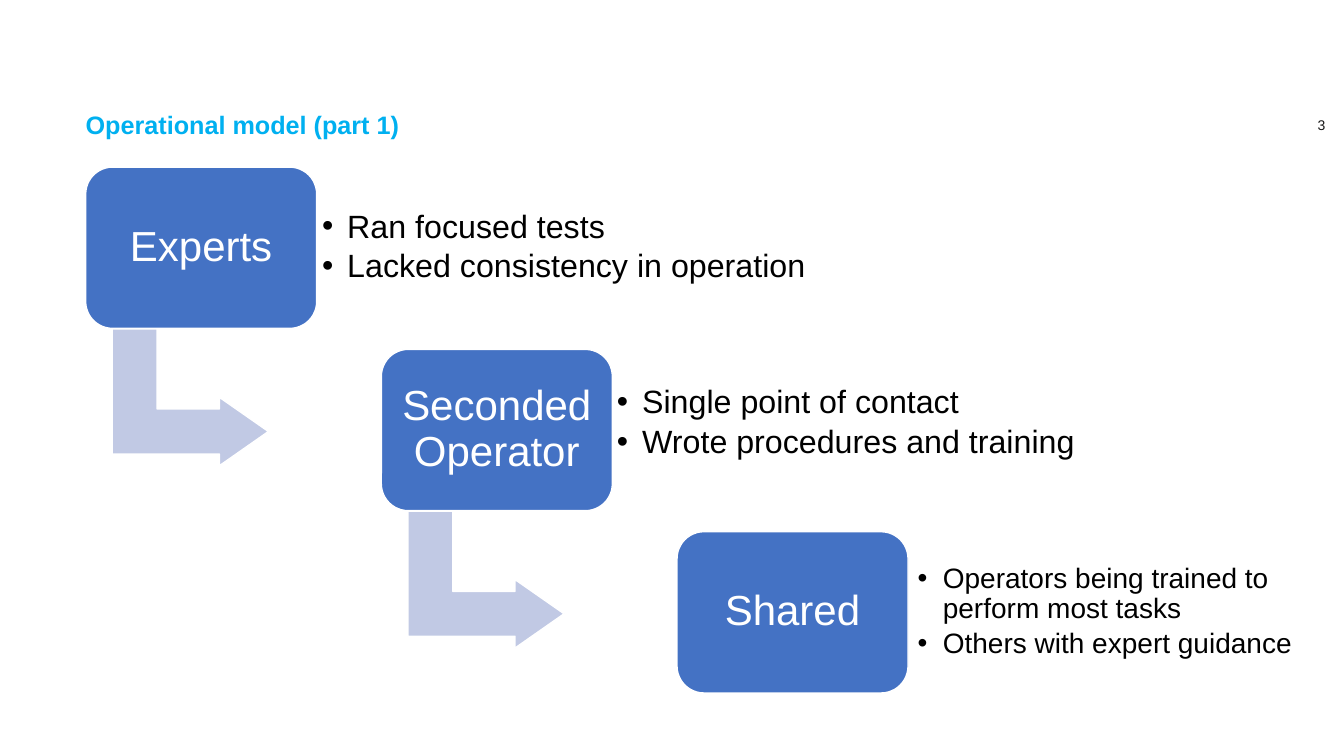
from lxml import etree
from pptx import Presentation, util as u
from pptx.dml.color import RGBColor
from pptx.enum import shapes as sh, text as tx
from pptx.oxml import ns

BLUE = RGBColor(0x44, 0x72, 0xC4)
PALE = RGBColor(0xC1, 0xC9, 0xE4)
CYAN = RGBColor(0x00, 0xB0, 0xF0)
WHITE = RGBColor(0xFF, 0xFF, 0xFF)
BLACK = RGBColor(0, 0, 0)
DARK = RGBColor(0x18, 0x17, 0x17)
WIDE, HIGH = u.Inches(13.333), u.Inches(7.5)
COLS, ROWS = 160, 90

STEPS = [
    ("Experts", ["Ran focused tests", "Lacked consistency in operation"],
     23, (26.7, 1.8, 71.2, 15.5)),
    ("Seconded Operator", ["Single point of contact", "Wrote procedures and training"],
     23, (26.6, 1, 66.5, 15.5)),
    ("Shared", ["Operators being trained to perform most tasks",
                "Others with expert guidance"], 20, (27.2, 1.8, 47.9, 15.5)),
]


def place(x, y, w, h):
    """Turn grid columns and rows into slide lengths."""
    return (int(x * WIDE / COLS), int(y * HIGH / ROWS),
            int(w * WIDE / COLS), int(h * HIGH / ROWS))


def write(shape, lines, size, color, bold=False, align=tx.PP_ALIGN.LEFT,
          anchor=tx.MSO_ANCHOR.MIDDLE, pad=(0.1, 0.05, 0.1, 0.05),
          space=0.9, after=0, dots=False):
    """Fill a shape with formatted paragraphs."""
    frame = shape.text_frame
    frame.word_wrap = True
    frame.auto_size = tx.MSO_AUTO_SIZE.NONE
    frame.vertical_anchor = anchor
    (frame.margin_left, frame.margin_top,
     frame.margin_right, frame.margin_bottom) = map(u.Inches, pad)
    frame.text = "\n".join(lines)
    for para in frame.paragraphs:
        para.alignment = align
        para.line_spacing = space
        para.space_after = u.Pt(after)
        font = para.runs[0].font
        font.name, font.size, font.bold = "Arial", u.Pt(size), bold
        font.color.rgb = color
        if dots:
            props = para._p.get_or_add_pPr()
            props.set("marL", str(u.Inches(0.25)))
            props.set("indent", str(-u.Inches(0.25)))
            etree.SubElement(props, ns.qn("a:buFont")).set("typeface", "Arial")
            etree.SubElement(props, ns.qn("a:buChar")).set("char", "•")


def block(slide, kind, box, fill, adjust):
    """Add a filled preset shape with a thin white outline."""
    shape = slide.shapes.add_shape(kind, *place(*box))
    shape.shadow.inherit = False
    shape.fill.solid()
    shape.fill.fore_color.rgb = fill
    shape.line.color.rgb = WHITE
    shape.line.width = u.Pt(1)
    for i, value in enumerate(adjust):
        shape.adjustments[i] = value
    return shape


def head(slide, x, y):
    """Set the title and the page number on one row."""
    title = slide.shapes.title
    title.left, title.top, title.width, title.height = place(x, y, 117.5, 6.7)
    write(title, ["Operational model (part 1)"], 18, CYAN, bold=True,
          anchor=tx.MSO_ANCHOR.TOP)
    page = slide.shapes.add_textbox(*place(x + 141, y, 8.4, 4.2))
    write(page, ["3"], 10, DARK, align=tx.PP_ALIGN.RIGHT,
          pad=(0.1, 0.05, 0.05, 0.05), space=1)


def stage(slide, box, step, last):
    """Draw one stage: its arrow, its card and its notes."""
    x, y, w, h = box
    name, notes, size, (right, down, width, height) = step
    if not last:
        arrow = block(slide, sh.MSO_SHAPE.BENT_UP_ARROW,
                      (x + 4.3, y + 18.1, 16.3, 18.6), PALE, (0.328, 0.25, 0.358))
        arrow.rotation = 90
    card = block(slide, sh.MSO_SHAPE.ROUNDED_RECTANGLE, box, BLUE, (0.167,))
    write(card, [name], 30, WHITE, align=tx.PP_ALIGN.CENTER, pad=(0.08,) * 4)
    note = slide.shapes.add_textbox(*place(x + right, y + down, width, height))
    write(note, notes, size, BLACK, pad=(0.12,) * 4, after=size * 0.15, dots=True)


def main():
    """Build the slide and save it."""
    deck = Presentation()
    deck.slide_width, deck.slide_height = WIDE, HIGH
    slide = deck.slides.add_slide(deck.slide_layouts[5])
    head(slide, 9, 12.8)
    for i, step in enumerate(STEPS):
        box = (10.2 + 35.2 * i, 19.9 + 21.7 * i, 27.5, 19.2)
        stage(slide, box, step, i == len(STEPS) - 1)
    deck.save("out.pptx")


if __name__ == "__main__":
    main()
